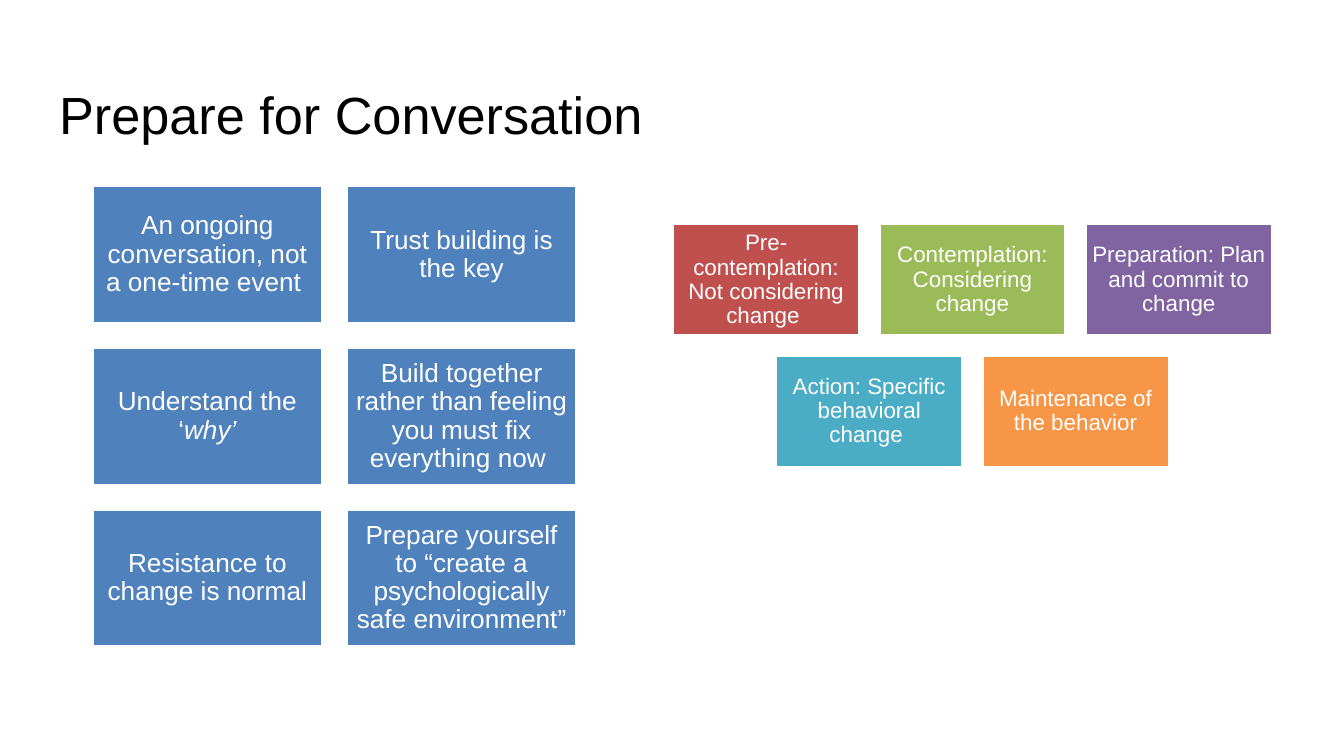
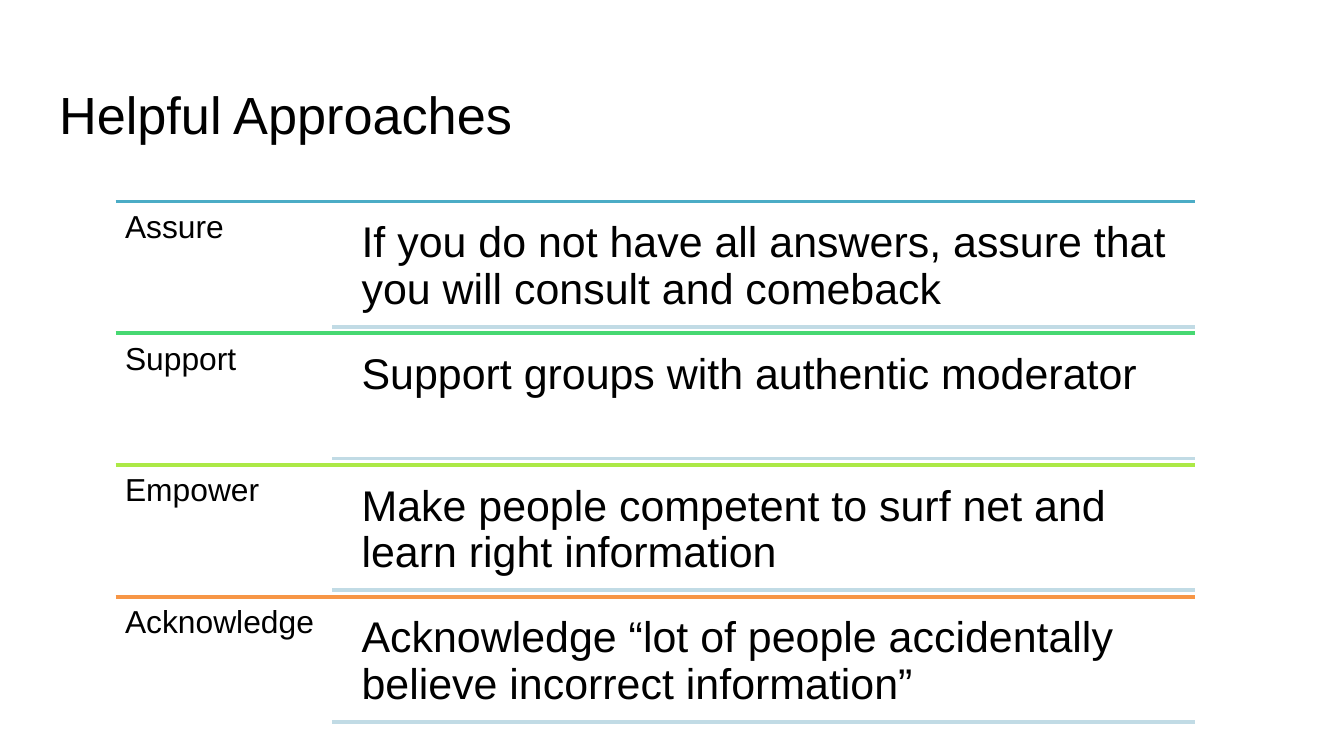
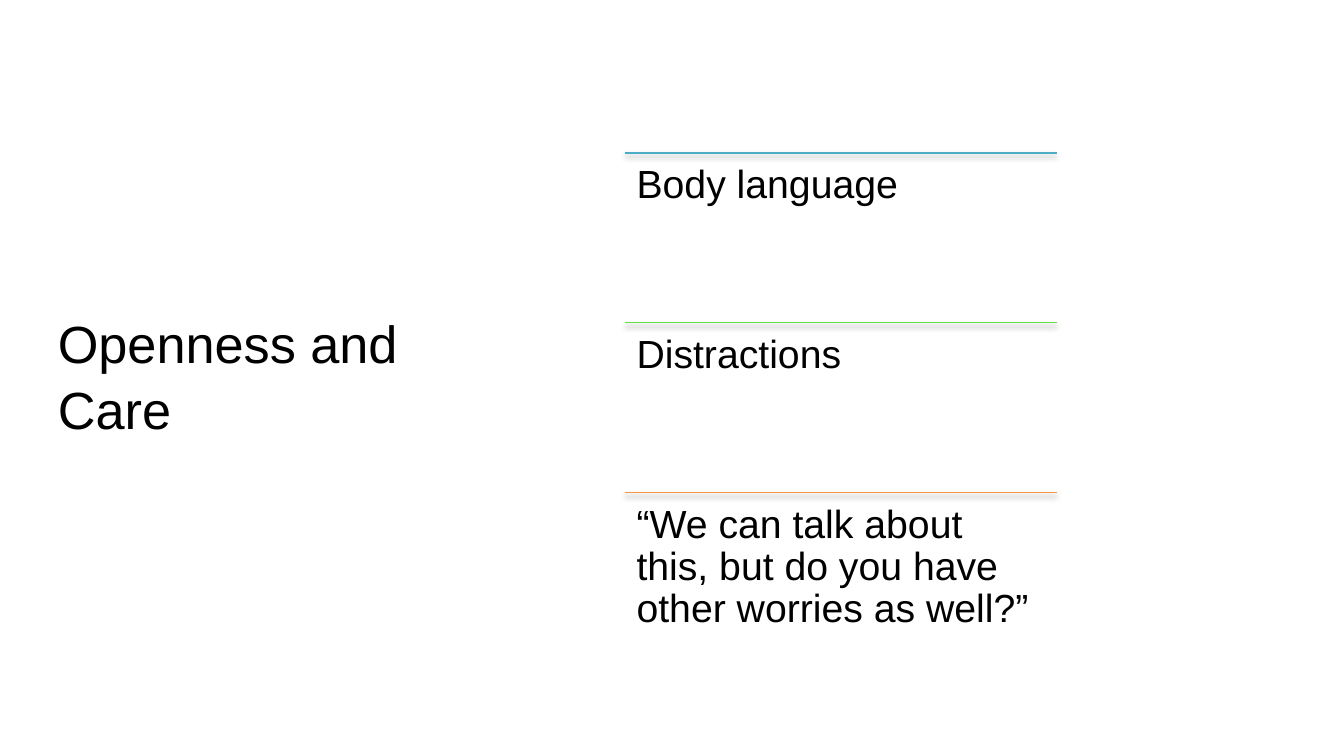
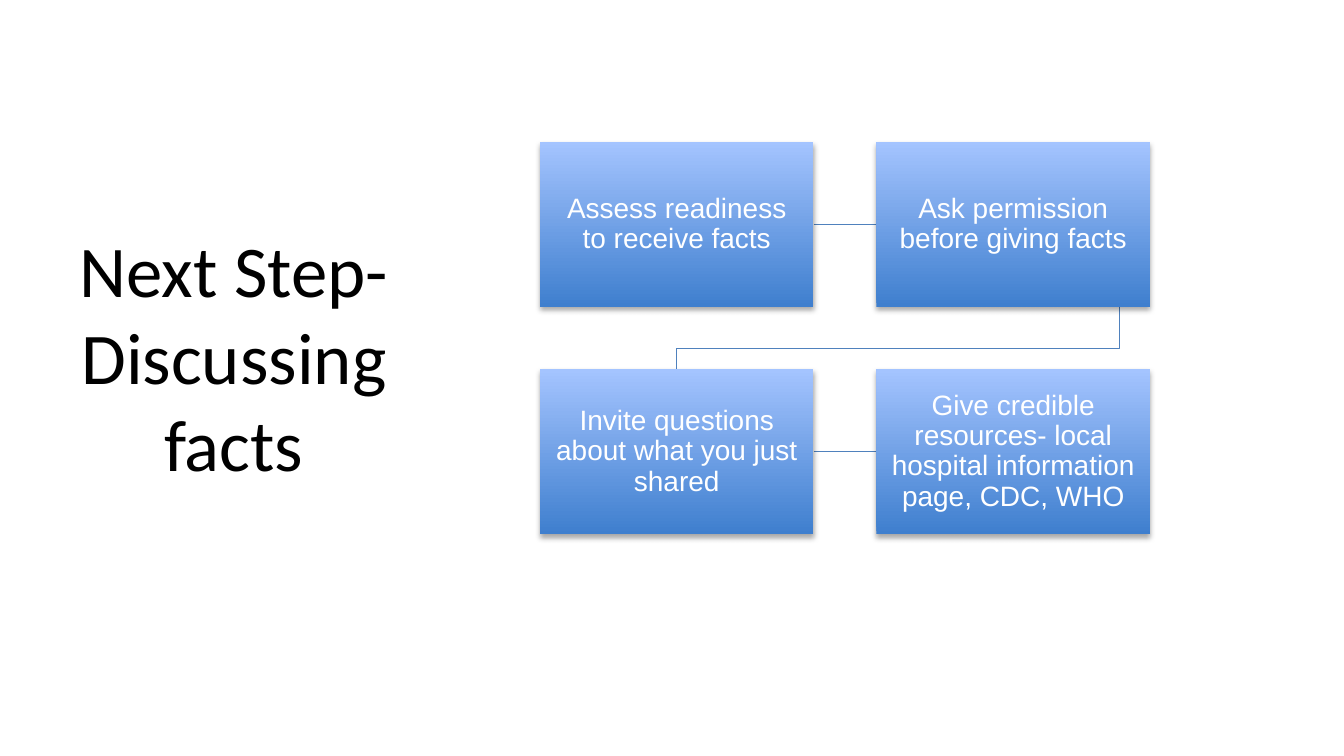
from lxml import etree
from pptx import Presentation
from pptx.dml.color import RGBColor
from pptx.enum.shapes import MSO_CONNECTOR as CONN, MSO_SHAPE as SHAPE
from pptx.enum.text import MSO_ANCHOR as ANCHOR, MSO_AUTO_SIZE as AUTO, PP_ALIGN as ALIGN
from pptx.oxml.ns import qn
from pptx.util import Pt

BLACK = RGBColor(0x00, 0x00, 0x00)
WHITE = RGBColor(0xFF, 0xFF, 0xFF)
BLUE = RGBColor(0x4F, 0x81, 0xBD)
RED = RGBColor(0xC0, 0x50, 0x4D)
OLIVE = RGBColor(0x9B, 0xBB, 0x59)
PURPLE = RGBColor(0x80, 0x64, 0xA2)
TEAL = RGBColor(0x4B, 0xAC, 0xC6)
ORANGE = RGBColor(0xF7, 0x96, 0x46)
MINT = RGBColor(0x47, 0xD8, 0x72)
LIME = RGBColor(0xAC, 0xE9, 0x46)
GREEN = RGBColor(0x60, 0xE1, 0x46)
PALE = RGBColor(0xC1, 0xDB, 0xE5)
DEEP = RGBColor(0x3F, 0x7F, 0xCE)
LIGHT = RGBColor(0xA4, 0xC4, 0xFF)


def write(sp, text, size=28, font="Arial", color=BLACK, align=ALIGN.LEFT,
          anchor=ANCHOR.TOP, inset=(7.2, 7.2), spacing=0.9):
    tf = sp.text_frame
    tf.word_wrap = True
    tf.auto_size = AUTO.NONE
    tf.vertical_anchor = anchor
    tf.margin_left = tf.margin_right = Pt(inset[0])
    tf.margin_top = tf.margin_bottom = Pt(inset[1])
    p = tf.paragraphs[0]
    p.alignment = align
    p.line_spacing = spacing
    p.space_before = Pt(0)
    runs = [text] if isinstance(text, str) else text
    for i, part in enumerate(runs):
        r = p.add_run()
        r.text = part
        r.font.size = Pt(size)
        r.font.name = font
        r.font.color.rgb = color
        r.font.italic = i % 2 == 1


def place(box):
    return [Pt(round(v, 2)) for v in box]


def add_title_slide(prs, text, box, **fmt):
    slide = prs.slides.add_slide(prs.slide_layouts[5])
    sp = slide.shapes.title
    sp.left, sp.top, sp.width, sp.height = place(box)
    write(sp, text, **{"spacing": 1.05, **fmt})
    return slide


def add_text(slide, text, box, **fmt):
    write(slide.shapes.add_textbox(*place(box)), text, **fmt)


def add_shadow(effects):
    shadow = etree.SubElement(effects, qn("a:outerShdw"), blurRad=str(Pt(3.1)),
                              dist=str(Pt(1.8)), dir="5400000", rotWithShape="0")
    color = etree.SubElement(shadow, qn("a:srgbClr"), val="000000")
    etree.SubElement(color, qn("a:alpha"), val="35000")


def style_line(sp, color, width, arrow=False):
    sp.line.color.rgb = color
    sp.line.width = Pt(width)
    if arrow:
        etree.SubElement(sp.line._get_or_add_ln(), qn("a:tailEnd"), type="arrow")


def add_line(slide, x1, y1, x2, y2, color, width, arrow=False, shadow=False):
    line = slide.shapes.add_connector(CONN.STRAIGHT, *place((x1, y1, x2, y2)))
    style_line(line, color, width, arrow)
    effects = etree.SubElement(line._element.spPr, qn("a:effectLst"))
    if shadow:
        add_shadow(effects)


def add_card(slide, text, box, fill, **fmt):
    sp = slide.shapes.add_shape(SHAPE.RECTANGLE, *place(box))
    sp.shadow.inherit = False
    if fill is None:
        sp.fill.gradient()
        sp.fill.gradient_angle = 90
        for stop, color in zip(sp.fill.gradient_stops, (DEEP, LIGHT)):
            stop.color.rgb = color
        sp.line.fill.background()
        add_shadow(sp._element.spPr.find(qn("a:effectLst")))
    else:
        sp.fill.solid()
        sp.fill.fore_color.rgb = fill
        style_line(sp, WHITE, 2)
    write(sp, text, color=WHITE, align=ALIGN.CENTER, anchor=ANCHOR.MIDDLE, **fmt)


def grid_cells(box, counts, gap):
    left, top, width, height = box
    cols, rows = max(counts), len(counts)
    w = (width - gap * (cols - 1)) / cols
    h = (height - gap * (rows - 1)) / rows
    return [(left + (cols - n) * (w + gap) / 2 + col * (w + gap), top + row * (h + gap), w, h)
            for row, n in enumerate(counts) for col in range(n)]


def add_cards(slide, box, counts, gap, cards, **fmt):
    for cell, (text, fill) in zip(grid_cells(box, counts, gap), cards):
        add_card(slide, text, cell, fill, **fmt)


def add_approaches(slide, box, rows):
    left, top, width, height = box
    pitch = height / len(rows)
    label_w, indent = 115.9, 124.6
    for i, (label, text, color) in enumerate(rows):
        y = top + i * pitch
        add_line(slide, left, y, left + width, y, color, 2)
        add_text(slide, label, (left, y, label_w, pitch), size=17, inset=(5, 5))
        add_text(slide, text, (left + indent, y + 3, width - indent, 64), size=23)
        add_line(slide, left + label_w, y + 67.1, left + width, y + 67.1, PALE, 2)


def add_ruled_list(slide, box, items):
    left, top, width, height = box
    pitch = height / len(items)
    for i, (text, color) in enumerate(items):
        y = top + i * pitch
        add_line(slide, left, y, left + width, y, color, 0.75, shadow=True)
        add_text(slide, text, (left, y, width, pitch), size=21, inset=(6.4, 6.4))


def add_process(slide, box, gap, steps):
    counts, overlap = (2, 2), 8
    cells = grid_cells(box, counts, gap)
    for x, y, w, h in cells[::2]:
        add_line(slide, x + w, y + h / 2, x + w + gap + overlap, y + h / 2, BLUE, 0.75, arrow=True)
    x, y, w, h = cells[1]
    start_x, start_y, turn_y = x + w - 16.5, y + h, y + h + 22.5
    end_x, end_y = cells[2][0] + w / 2, cells[2][1] + overlap
    fb = slide.shapes.build_freeform(Pt(start_x), Pt(start_y))
    fb.add_line_segments([(Pt(px), Pt(py)) for px, py in
                          ((start_x, turn_y), (end_x, turn_y), (end_x, end_y))], close=False)
    elbow = fb.convert_to_shape()
    elbow.shadow.inherit = False
    elbow.fill.background()
    style_line(elbow, BLUE, 0.75, arrow=True)
    add_cards(slide, box, counts, gap, [(text, None) for text in steps], size=15)


def main():
    prs = Presentation()
    prs.slide_width, prs.slide_height = Pt(720), Pt(405)
    top_title = (24.5, 35.3, 671, 45.4)

    slide = add_title_slide(prs, "Prepare for Conversation", top_title)
    principles = [
        "An ongoing conversation, not a one-time event ",
        "Trust building is the key",
        ("Understand the ‘", "why’"),
        "Build together rather than feeling you must fix everything now ",
        "Resistance to change is normal",
        "Prepare yourself to “create a psychologically safe environment” ",
    ]
    add_cards(slide, (49.2, 99.4, 260, 247.4), (2, 2, 2), 12.4,
              [(text, BLUE) for text in principles], size=14, inset=(4.2, 4.2))
    stages = [
        ("Pre-contemplation: Not considering change ", RED),
        ("Contemplation: Considering change", OLIVE),
        ("Preparation: Plan and commit to change", PURPLE),
        ("Action: Specific behavioral change ", TEAL),
        ("Maintenance of the behavior", ORANGE),
    ]
    add_cards(slide, (360.2, 119.7, 321.6, 131), (3, 2), 10, stages, size=12, inset=(3.6, 3.6))

    slide = add_title_slide(prs, "Helpful Approaches", top_title)
    add_approaches(slide, (62, 108, 578, 282.2), [
        ("Assure", "If you do not have all answers, assure that you will consult and comeback", TEAL),
        ("Support", "Support groups with authentic moderator", MINT),
        ("Empower", "Make people competent to surf net and learn right information", LIME),
        ("Acknowledge", "Acknowledge “lot of people accidentally believe incorrect information”",
         ORANGE),
    ])

    slide = add_title_slide(prs, "Openness and Care", (23.8, 157.7, 214.6, 108.7))
    add_ruled_list(slide, (334.6, 82, 231.4, 272.7), [
        ("Body language", TEAL),
        ("Distractions", GREEN),
        ("“We can talk about this, but do you have other worries as well?”", ORANGE),
    ])

    slide = add_title_slide(prs, "Next Step- Discussing facts", (31, 116.6, 188.6, 159.8), size=39,
                            font="Calibri", align=ALIGN.CENTER, inset=(7.2, 3.6), spacing=1.0)
    add_process(slide, (289.3, 76.1, 326.8, 210), 33.7, [
        "Assess readiness to receive facts",
        "Ask permission before giving facts",
        "Invite questions about what you just shared",
        "Give credible resources- local hospital information page, CDC, WHO",
    ])
    prs.save("out.pptx")


if __name__ == "__main__":
    main()
